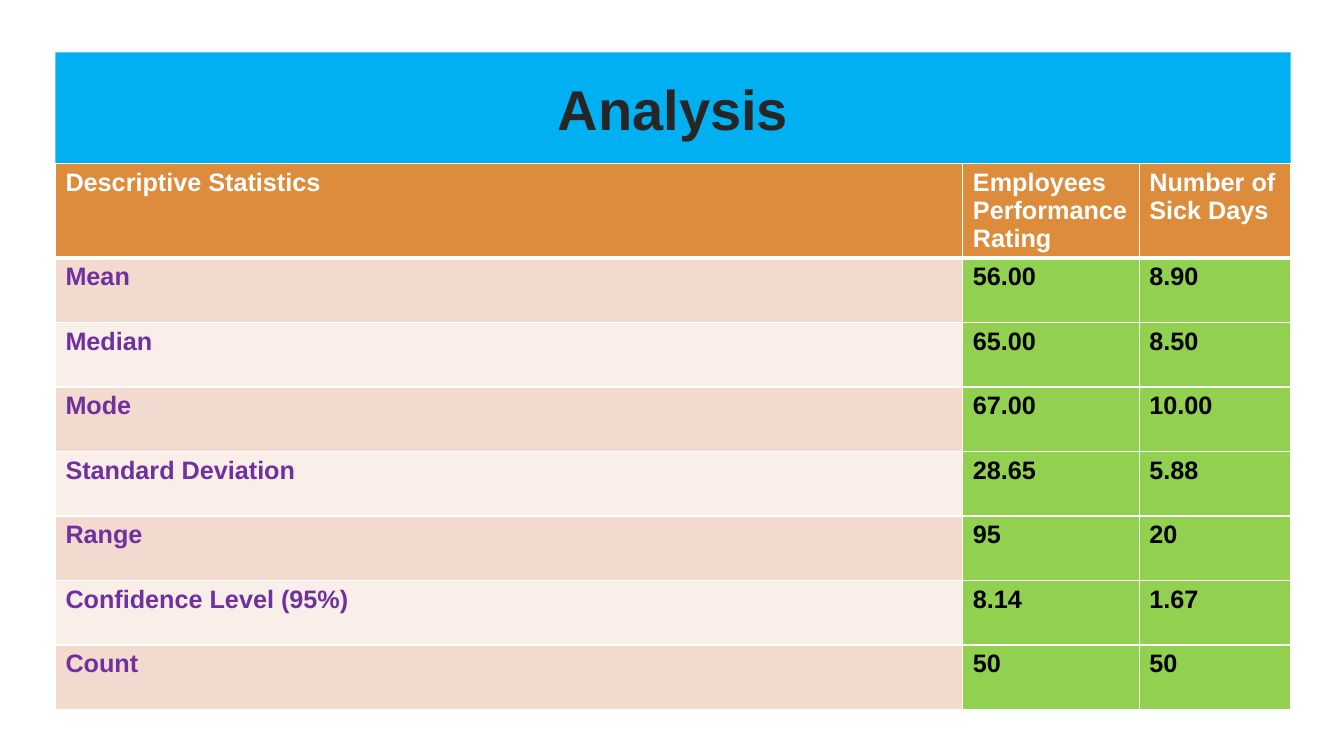
from lxml import etree
from pptx import Presentation
from pptx.dml.color import RGBColor
from pptx.enum.text import MSO_ANCHOR, PP_ALIGN
from pptx.oxml.ns import qn
from pptx.util import Inches, Pt

CENTER = PP_ALIGN.CENTER
MIDDLE = MSO_ANCHOR.MIDDLE
TITLE_ONLY = 5
FONT = "Arial"
COLORS = {
    "banner": "00B0F0", "title": "262626", "header": "DD8C3C",
    "white": "FFFFFF", "band_dark": "F2DACE", "band_light": "F9EEE8",
    "label": "7030A0", "value": "000000", "value_fill": "92D050",
}
LEFT, TOP, WIDTH = 0.55, 0.52, 12.25
BANNER_HEIGHT = 1.1
HEADER_HEIGHT, ROW_HEIGHT = 0.94, 0.64
COLUMN_WIDTHS = (9, 1.75, 1.5)
STATISTICS = [
    ("Descriptive Statistics", "Employees Performance Rating", "Number of Sick Days"),
    ("Mean", "56.00", "8.90"),
    ("Median", "65.00", "8.50"),
    ("Mode", "67.00", "10.00"),
    ("Standard Deviation", "28.65", "5.88"),
    ("Range", "95", "20"),
    ("Confidence Level (95%)", "8.14", "1.67"),
    ("Count", "50", "50"),
]


def rgb(name):
    """Return the named palette colour."""
    return RGBColor.from_string(COLORS[name])


def add_run(paragraph, text, size, color):
    """Add one bold run to a paragraph."""
    run = paragraph.add_run()
    run.text = text
    run.font.name = FONT
    run.font.size = Pt(size)
    run.font.bold = True
    run.font.color.rgb = rgb(color)


def add_border(cell, side, points):
    """Draw a white border on one side of a cell."""
    properties = cell._tc.get_or_add_tcPr()
    line = etree.SubElement(properties, qn(f"a:ln{side}"), w=str(Pt(points)))
    fill = etree.SubElement(line, qn("a:solidFill"))
    etree.SubElement(fill, qn("a:srgbClr"), val=COLORS["white"])


def cell_colors(row, column):
    """Return the fill and text colour names for a table position."""
    if row == 0:
        return "header", "white"
    if column > 0:
        return "value_fill", "value"
    return ("band_dark" if row % 2 else "band_light"), "label"


def place_title(slide, left, top, width, height):
    """Format the title placeholder as a coloured banner."""
    title = slide.shapes.title
    title.left, title.top = Inches(left), Inches(top)
    title.width, title.height = Inches(width), Inches(height)
    title.fill.solid()
    title.fill.fore_color.rgb = rgb("banner")
    title.text_frame.vertical_anchor = MIDDLE
    paragraph = title.text_frame.paragraphs[0]
    paragraph.alignment = CENTER
    add_run(paragraph, "Analysis", 40, "title")


def place_table(slide, left, top, width):
    """Add the statistics table with its header and banded rows."""
    height = HEADER_HEIGHT + ROW_HEIGHT * (len(STATISTICS) - 1)
    table = slide.shapes.add_table(
        len(STATISTICS), len(COLUMN_WIDTHS),
        Inches(left), Inches(top), Inches(width), Inches(height)).table
    for column, share in zip(table.columns, COLUMN_WIDTHS):
        column.width = Inches(width * share / sum(COLUMN_WIDTHS))
    for row_index, texts in enumerate(STATISTICS):
        table.rows[row_index].height = Inches(ROW_HEIGHT if row_index else HEADER_HEIGHT)
        for column_index, text in enumerate(texts):
            cell = table.cell(row_index, column_index)
            fill, color = cell_colors(row_index, column_index)
            for side in "LRTB":
                header_edge = (row_index, side) in ((0, "B"), (1, "T"))
                add_border(cell, side, 3 if header_edge else 1)
            cell.fill.solid()
            cell.fill.fore_color.rgb = rgb(fill)
            add_run(cell.text_frame.paragraphs[0], text, 18, color)


def main():
    """Build and save the analysis slide."""
    presentation = Presentation()
    presentation.slide_width = Inches(13.33)
    presentation.slide_height = Inches(7.5)
    slide = presentation.slides.add_slide(presentation.slide_layouts[TITLE_ONLY])
    place_title(slide, LEFT, TOP, WIDTH, BANNER_HEIGHT)
    place_table(slide, LEFT, TOP + BANNER_HEIGHT, WIDTH)
    presentation.save("out.pptx")


if __name__ == "__main__":
    main()
